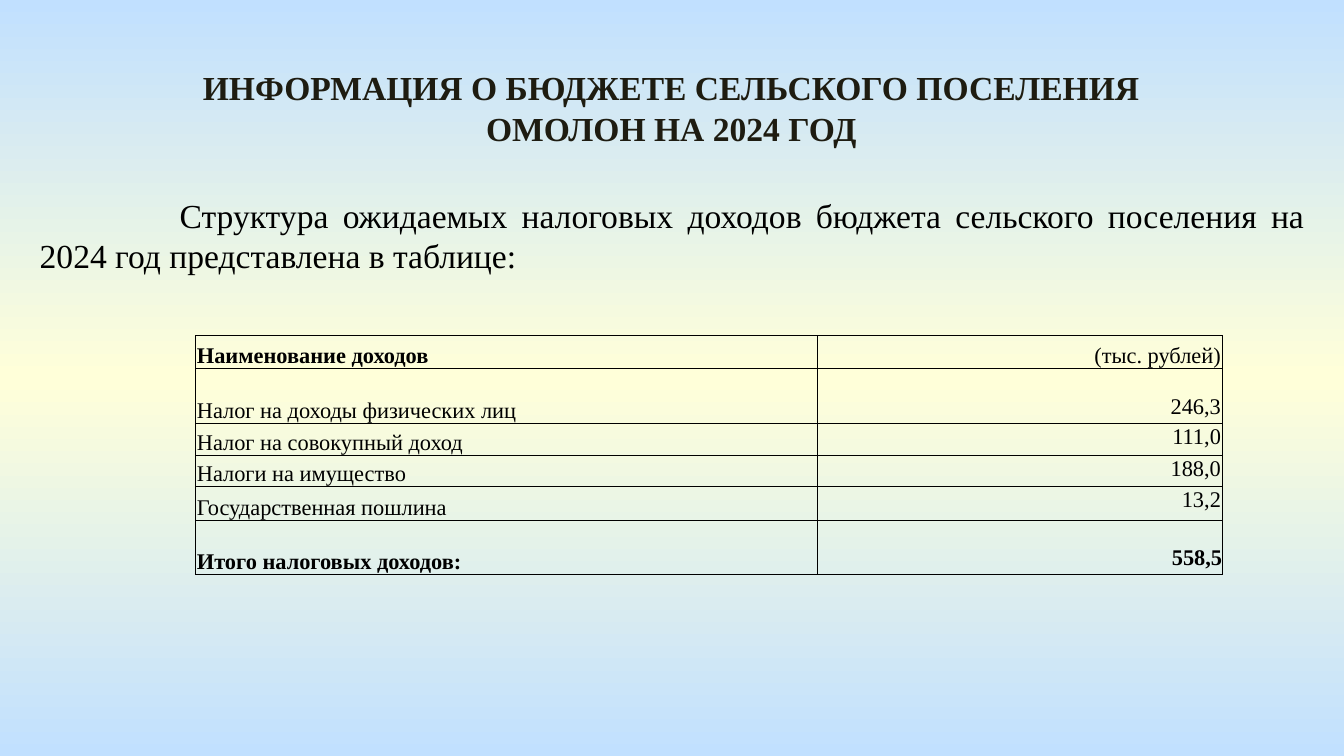
"""Build the slide on the settlement's expected tax revenue for 2024."""
from copy import deepcopy
from dataclasses import dataclass

from lxml import etree
from pptx import Presentation
from pptx.dml.color import RGBColor
from pptx.enum import text
from pptx.oxml import ns
from pptx.util import Pt

COLORS = {"sky": "C1E0FF", "cream": "FFFFD9", "title": "1E1C11", "black": "000000"}
FONT = "Times New Roman"
ALIGN = text.PP_ALIGN


@dataclass
class Box:
    """A paragraph of text in a wrapping box."""

    words: str
    left: float
    top: float
    width: float
    height: float
    align: ALIGN
    color: str = "black"
    bold: bool = False
    indent: float = 0


@dataclass
class Row:
    """A table row with the space above its amount."""

    name: str
    amount: str
    height: float
    name_bold: bool = False
    amount_bold: bool = False
    gap: float = 0.7
    side: float = 0.7
    amount_anchor: text.MSO_ANCHOR = text.MSO_ANCHOR.TOP


BOXES = [
    Box("ИНФОРМАЦИЯ О БЮДЖЕТЕ СЕЛЬСКОГО ПОСЕЛЕНИЯ ОМОЛОН НА 2024 ГОД",
        81.4, 32.4, 556.6, 51, ALIGN.CENTER, "title", True),
    Box("Структура ожидаемых налоговых доходов бюджета сельского поселения "
        "на 2024 год представлена в таблице:",
        14.2, 100.8, 692, 51, ALIGN.JUSTIFY, indent=75),
]
ROWS = [
    Row("Наименование доходов", "(тыс. рублей)", 17.6, name_bold=True,
        amount_anchor=text.MSO_ANCHOR.BOTTOM),
    Row("Налог на доходы физических лиц", "246,3", 29.4, gap=14.2),
    Row("Налог на совокупный доход", "111,0", 17.2),
    Row("Налоги на имущество", "188,0", 16.8),
    Row("Государственная пошлина", "13,2", 18),
    Row("Итого налоговых доходов:", "558,5", 29, True, True, 13.6, 0),
]
COLUMNS = [333.2, 216.8]


def rgb(name: str) -> RGBColor:
    """Return a named colour."""
    return RGBColor.from_string(COLORS[name])


def write(tf, words: str, size: float, align: ALIGN, color: str, bold: bool):
    """Put one formatted paragraph into a text frame and return it."""
    tf.text = words
    p = tf.paragraphs[0]
    p.alignment = align
    f = p.runs[0].font
    f.name, f.size, f.bold = FONT, Pt(size), bold
    f.color.rgb = rgb(color)
    return p


def paint_background(s) -> None:
    """Fill the slide with a vertical three-stop gradient."""
    fill = s.background.fill
    fill.gradient()
    fill.gradient_angle = 270
    stops = s.element.xpath(".//p:bg//a:gsLst")[0]
    stops.insert(1, deepcopy(stops[0]))
    for stop, pos, name in zip(fill.gradient_stops, (0, 0.5, 1), ("sky", "cream", "sky")):
        stop.position = pos
        stop.color.rgb = rgb(name)


def add_box(s, box: Box) -> None:
    """Draw a text box."""
    sp = s.shapes.add_textbox(Pt(box.left), Pt(box.top), Pt(box.width), Pt(box.height))
    tf = sp.text_frame
    tf.word_wrap = True
    tf.auto_size = text.MSO_AUTO_SIZE.SHAPE_TO_FIT_TEXT
    p = write(tf, box.words, 18, box.align, box.color, box.bold)
    if box.indent:
        p._p.get_or_add_pPr().set("indent", str(Pt(box.indent)))


def add_borders(cell) -> None:
    """Give a cell thin black borders."""
    pr = cell._tc.get_or_add_tcPr()
    for side in ("lnL", "lnR", "lnT", "lnB"):
        ln = etree.SubElement(pr, ns.qn(f"a:{side}"), w=str(Pt(0.5)))
        fill = etree.SubElement(ln, ns.qn("a:solidFill"))
        etree.SubElement(fill, ns.qn("a:srgbClr"), val=COLORS["black"])


def fill_cell(cell, words: str, align: ALIGN, bold: bool,
              anchor: text.MSO_ANCHOR, top: float, side: float) -> None:
    """Write and format one table cell."""
    write(cell.text_frame, words, 12, align, "black", bold)
    cell.vertical_anchor = anchor
    cell.margin_left = cell.margin_right = Pt(side)
    cell.margin_top, cell.margin_bottom = Pt(top), Pt(0)
    add_borders(cell)
    cell.fill.background()


def add_revenue_table(s, left: float, top: float) -> None:
    """Draw the revenue table."""
    height = sum(row.height for row in ROWS)
    table = s.shapes.add_table(len(ROWS), len(COLUMNS), Pt(left), Pt(top),
                               Pt(sum(COLUMNS)), Pt(height)).table
    table.first_row = table.horz_banding = False
    for column, width in zip(table.columns, COLUMNS):
        column.width = Pt(width)
    for i, row in enumerate(ROWS):
        table.rows[i].height = Pt(row.height)
        fill_cell(table.cell(i, 0), row.name, ALIGN.JUSTIFY, row.name_bold,
                  text.MSO_ANCHOR.BOTTOM, 0.7, 0.7)
        fill_cell(table.cell(i, 1), row.amount, ALIGN.RIGHT, row.amount_bold,
                  row.amount_anchor, row.gap, row.side)


def main() -> None:
    """Build and save the presentation."""
    prs = Presentation()
    prs.slide_width, prs.slide_height = Pt(720), Pt(405)
    s = prs.slides.add_slide(prs.slide_layouts[6])
    paint_background(s)
    for box in BOXES:
        add_box(s, box)
    add_revenue_table(s, 104.8, 179.8)
    prs.save("out.pptx")


if __name__ == "__main__":
    main()
